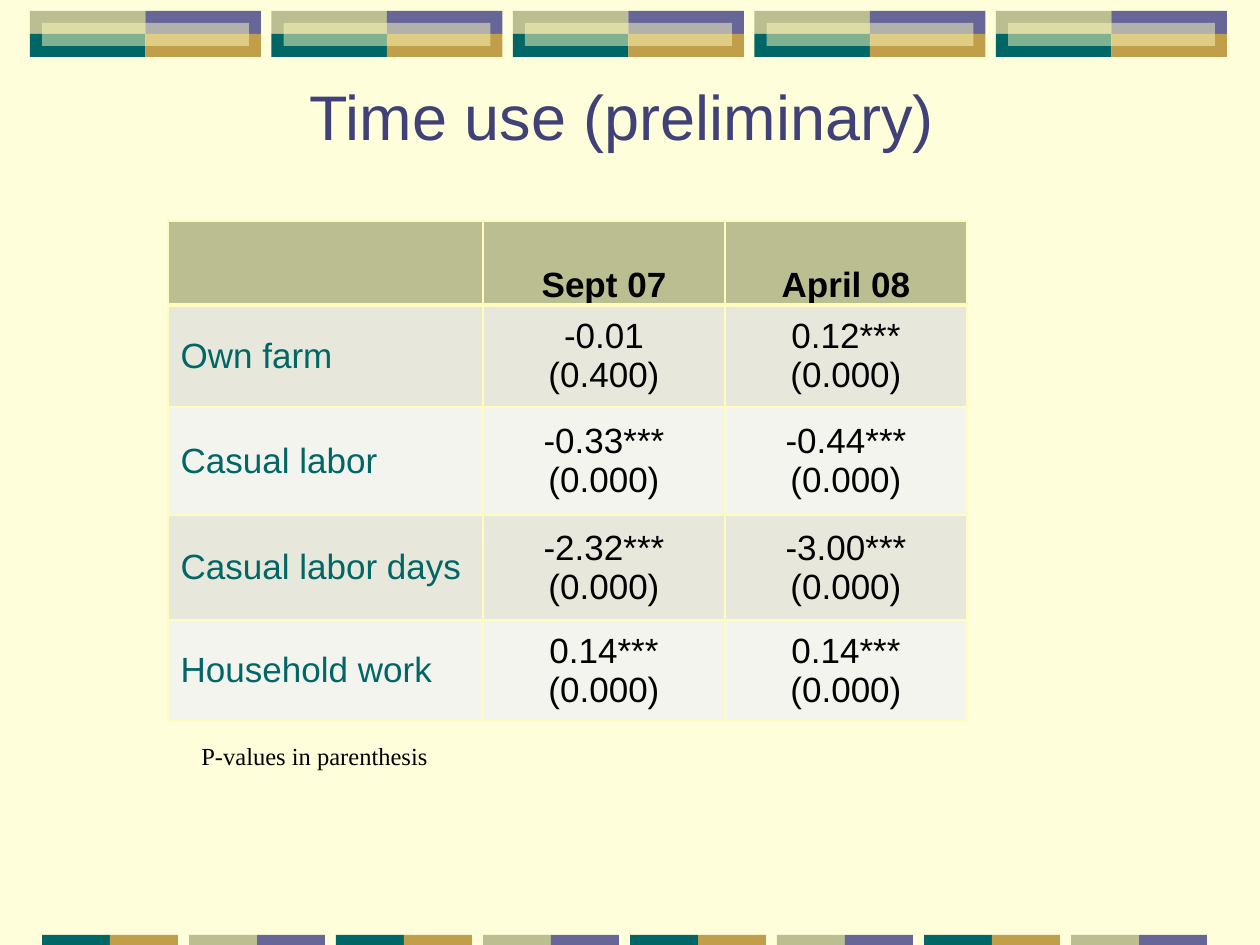
from lxml import etree
from pptx import Presentation
from pptx.dml.color import RGBColor
from pptx.enum.shapes import MSO_SHAPE
from pptx.enum.text import MSO_ANCHOR, PP_ALIGN
from pptx.oxml.ns import qn
from pptx.util import Pt

RECT = MSO_SHAPE.RECTANGLE
LEFT, CENTER = PP_ALIGN.LEFT, PP_ALIGN.CENTER
TOP, MIDDLE, BOTTOM = MSO_ANCHOR.TOP, MSO_ANCHOR.MIDDLE, MSO_ANCHOR.BOTTOM

TITLE = "Time use (preliminary) "
NOTE = "P-values in parenthesis"
HEADER = ["", "Sept 07", "April 08"]
ROWS = [
    ("Own farm", ("-0.01", "(0.400)"), ("0.12***", "(0.000)")),
    ("Casual labor", ("-0.33***", "(0.000)"), ("-0.44***", "(0.000)")),
    ("Casual labor days", ("-2.32***", "(0.000)"), ("-3.00***", "(0.000)")),
    ("Household work", ("0.14***", "(0.000)"), ("0.14***", "(0.000)")),
]

THEME = {
    "background": "FFFEDB", "title": "404176", "text": "000000",
    "teal": "006666", "gold": "C09E4A", "olive": "BABE90", "violet": "666699",
    "cream": "FFFDBD", "bands": ("E7E8DB", "F3F4EE"),
    "sans": "Arial", "serif": "Times New Roman",
    "title_size": 36, "table_size": 20, "note_size": 14,
}

# Layout in px
SLIDE_W, SLIDE_H = 1260, 945
EMU_PER_PX = 914400 / 126
COLUMN_WIDTHS = [315, 242, 242]
ROW_HEIGHTS = [84, 102, 108, 105, 101]
TABLE_LEFT, TABLE_TOP = 168, 221
TOP_BLOCKS, TOP_LEFT, TOP_Y, TOP_PITCH = 5, 30, 11, 241.5
TOP_W, TOP_H, INLAY_MARGIN = 231, 46, 12
FOOT_BLOCKS, FOOT_LEFT, FOOT_Y, FOOT_PITCH = 8, 42, 935, 147
FOOT_HALF, FOOT_H = 68, 10


def px(length):
    return round(length * EMU_PER_PX)


def box(*lengths):
    return [px(length) for length in lengths]


def rgb(name):
    return RGBColor.from_string(THEME.get(name, name))


def write_text(frame, *lines, size, color="text", font="sans", bold=False, align=LEFT):
    frame.word_wrap = True
    for index, line in enumerate(lines):
        paragraph = frame.paragraphs[0] if index == 0 else frame.add_paragraph()
        paragraph.alignment = align
        run = paragraph.add_run()
        run.text = line
        run.font.size = Pt(THEME[size])
        run.font.name = THEME[font]
        run.font.bold = bold
        run.font.color.rgb = rgb(color)


def add_tile(slide, left, top, width, height, color, opacity=100):
    tile = slide.shapes.add_shape(RECT, *box(left, top, width, height))
    tile.shadow.inherit = False
    tile.fill.solid()
    tile.fill.fore_color.rgb = rgb(color)
    tile.line.fill.background()
    if opacity < 100:
        color_element = tile.element.spPr.find(".//" + qn("a:srgbClr"))
        etree.SubElement(color_element, qn("a:alpha"), val=str(opacity * 1000))


def add_top_band(slide):
    half_w, half_h = TOP_W / 2, TOP_H / 2
    quarters = [(0, 0, "olive"), (1, 0, "violet"), (0, 1, "teal"), (1, 1, "gold")]
    for block in range(TOP_BLOCKS):
        left = TOP_LEFT + block * TOP_PITCH
        for column, row, color in quarters:
            add_tile(slide, left + column * half_w, TOP_Y + row * half_h,
                     half_w, half_h, color)
        add_tile(slide, left + INLAY_MARGIN, TOP_Y + INLAY_MARGIN,
                 TOP_W - 2 * INLAY_MARGIN, half_h, "cream", opacity=50)


def add_foot_band(slide):
    pairs = [("teal", "gold"), ("olive", "violet")]
    for block in range(FOOT_BLOCKS):
        for half, color in enumerate(pairs[block % 2]):
            add_tile(slide, FOOT_LEFT + block * FOOT_PITCH + half * FOOT_HALF,
                     FOOT_Y, FOOT_HALF, FOOT_H, color)


def style_cell(cell, fill, anchor, top=1, bottom=1):
    """Set borders, which must precede the fill in the XML, then fill and anchor."""
    properties = cell._tc.get_or_add_tcPr()
    for side, width in (("L", 1), ("R", 1), ("T", top), ("B", bottom)):
        line = etree.SubElement(properties, qn("a:ln" + side), w=str(Pt(width)))
        solid = etree.SubElement(line, qn("a:solidFill"))
        etree.SubElement(solid, qn("a:srgbClr"), val=THEME["cream"])
    cell.fill.solid()
    cell.fill.fore_color.rgb = rgb(fill)
    cell.vertical_anchor = anchor


def set_value_margins(cell):
    cell.margin_left = cell.margin_right = px(9)
    cell.margin_top = cell.margin_bottom = 0


def add_results_table(slide):
    table = slide.shapes.add_table(
        len(ROW_HEIGHTS), len(COLUMN_WIDTHS),
        *box(TABLE_LEFT, TABLE_TOP, sum(COLUMN_WIDTHS), sum(ROW_HEIGHTS))).table
    for column, width in zip(table.columns, COLUMN_WIDTHS):
        column.width = px(width)
    for row, height in zip(table.rows, ROW_HEIGHTS):
        row.height = px(height)

    for column, heading in enumerate(HEADER):
        cell = table.cell(0, column)
        style_cell(cell, "olive", BOTTOM, bottom=3)
        if heading:
            set_value_margins(cell)
            write_text(cell.text_frame, heading, size="table_size", bold=True, align=CENTER)

    for row, (label, *results) in enumerate(ROWS, start=1):
        fill = THEME["bands"][(row - 1) % 2]
        rule = 3 if row == 1 else 1
        label_cell = table.cell(row, 0)
        style_cell(label_cell, fill, MIDDLE, top=rule)
        write_text(label_cell.text_frame, label, size="table_size", color="teal")
        for column, result in enumerate(results, start=1):
            cell = table.cell(row, column)
            style_cell(cell, fill, MIDDLE, top=rule)
            set_value_margins(cell)
            write_text(cell.text_frame, *result, size="table_size", align=CENTER)


def main():
    deck = Presentation()
    deck.slide_width, deck.slide_height = box(SLIDE_W, SLIDE_H)
    slide = deck.slides.add_slide(deck.slide_layouts[5])
    slide.background.fill.solid()
    slide.background.fill.fore_color.rgb = rgb("background")

    add_top_band(slide)
    add_foot_band(slide)

    title = slide.shapes.title
    title.left, title.top, title.width, title.height = box(32, 63, 1197, 105)
    title.text_frame.vertical_anchor = MIDDLE
    write_text(title.text_frame, TITLE, size="title_size", color="title", align=CENTER)

    add_results_table(slide)

    note = slide.shapes.add_textbox(*box(189, 735, 305, 43))
    note.text_frame.vertical_anchor = TOP
    write_text(note.text_frame, NOTE, size="note_size", font="serif")

    deck.save("out.pptx")


if __name__ == "__main__":
    main()
